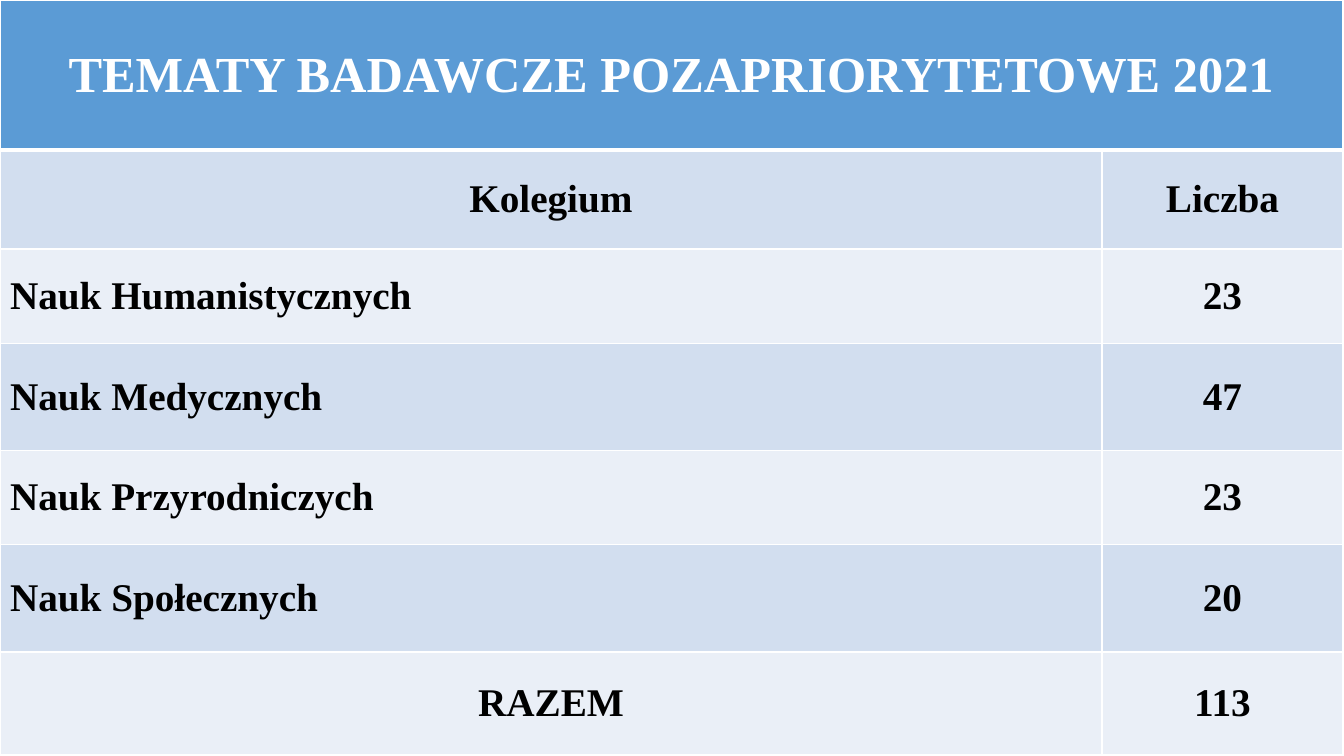
from lxml.etree import SubElement
from pptx import Presentation
from pptx.dml.color import RGBColor
from pptx.enum.text import MSO_ANCHOR as Anchor, PP_ALIGN as Align
from pptx.oxml.ns import qn
from pptx.util import Inches, Pt

WHITE = RGBColor(0xFF, 0xFF, 0xFF)
BLACK = RGBColor(0, 0, 0)
HEADER_BLUE = RGBColor(0x5B, 0x9B, 0xD5)
BAND_DARK = RGBColor(0xD2, 0xDE, 0xEF)
BAND_LIGHT = RGBColor(0xEA, 0xEF, 0xF7)

FONT = "Times New Roman"
TITLE = "TEMATY BADAWCZE POZAPRIORYTETOWE 2021"
TOPIC_COUNTS = [
    ("Kolegium", "Liczba"),
    ("Nauk Humanistycznych", "23"),
    ("Nauk Medycznych", "47"),
    ("Nauk Przyrodniczych", "23"),
    ("Nauk Społecznych", "20"),
    ("RAZEM", "113"),
]
CENTERED_LABELS = ("Kolegium", "RAZEM")
COLUMN_WIDTHS = (10.93, 2.39)
ROW_HEIGHTS = (1.49, 0.98, 0.94, 1.06, 0.93, 1.07, 1.02)


def write_text(cell, text, size=28, color=BLACK, align=Align.CENTER):
    """Write bold, vertically centred text into a cell."""
    cell.vertical_anchor = Anchor.MIDDLE
    paragraph = cell.text_frame.paragraphs[0]
    paragraph.alignment = align
    run = paragraph.add_run()
    run.text = text
    run.font.name = FONT
    run.font.size = Pt(size)
    run.font.bold = True
    run.font.color.rgb = color


def paint_cell(cell, fill, top=1, bottom=1):
    """Give a cell white borders and a solid fill."""
    properties = cell._tc.get_or_add_tcPr()
    for side, width in (("L", 1), ("R", 1), ("T", top), ("B", bottom)):
        border = SubElement(properties, qn(f"a:ln{side}"), w=str(Pt(width)))
        color = SubElement(border, qn("a:solidFill"))
        SubElement(color, qn("a:srgbClr"), val=str(WHITE))
    cell.fill.solid()
    cell.fill.fore_color.rgb = fill


def add_topics_table(slide, left, top, width, height):
    """Place the table of research topics per college in the given box."""
    table = slide.shapes.add_table(
        len(ROW_HEIGHTS), len(COLUMN_WIDTHS), left, top, width, height
    ).table
    for column, share in zip(table.columns, COLUMN_WIDTHS):
        column.width = int(width * share / sum(COLUMN_WIDTHS))
    for row, share in zip(table.rows, ROW_HEIGHTS):
        row.height = int(height * share / sum(ROW_HEIGHTS))

    title_cell = table.cell(0, 0)
    title_cell.merge(table.cell(0, 1))
    write_text(title_cell, TITLE, size=36, color=WHITE)
    for column in range(len(COLUMN_WIDTHS)):
        paint_cell(table.cell(0, column), HEADER_BLUE, bottom=3)

    for index, (college, count) in enumerate(TOPIC_COUNTS, start=1):
        college_cell, count_cell = table.cell(index, 0), table.cell(index, 1)
        align = Align.CENTER if college in CENTERED_LABELS else Align.LEFT
        write_text(college_cell, college, align=align)
        write_text(count_cell, count)
        for cell in (college_cell, count_cell):
            paint_cell(cell, BAND_DARK if index % 2 else BAND_LIGHT,
                       top=3 if index == 1 else 1)


def main():
    """Build the slide and save the presentation."""
    presentation = Presentation()
    presentation.slide_width = Inches(13.33)
    presentation.slide_height = Inches(7.5)
    slide = presentation.slides.add_slide(presentation.slide_layouts[6])
    add_topics_table(slide, 0, 0, Inches(13.32), Inches(7.49))
    presentation.save("out.pptx")


if __name__ == "__main__":
    main()
